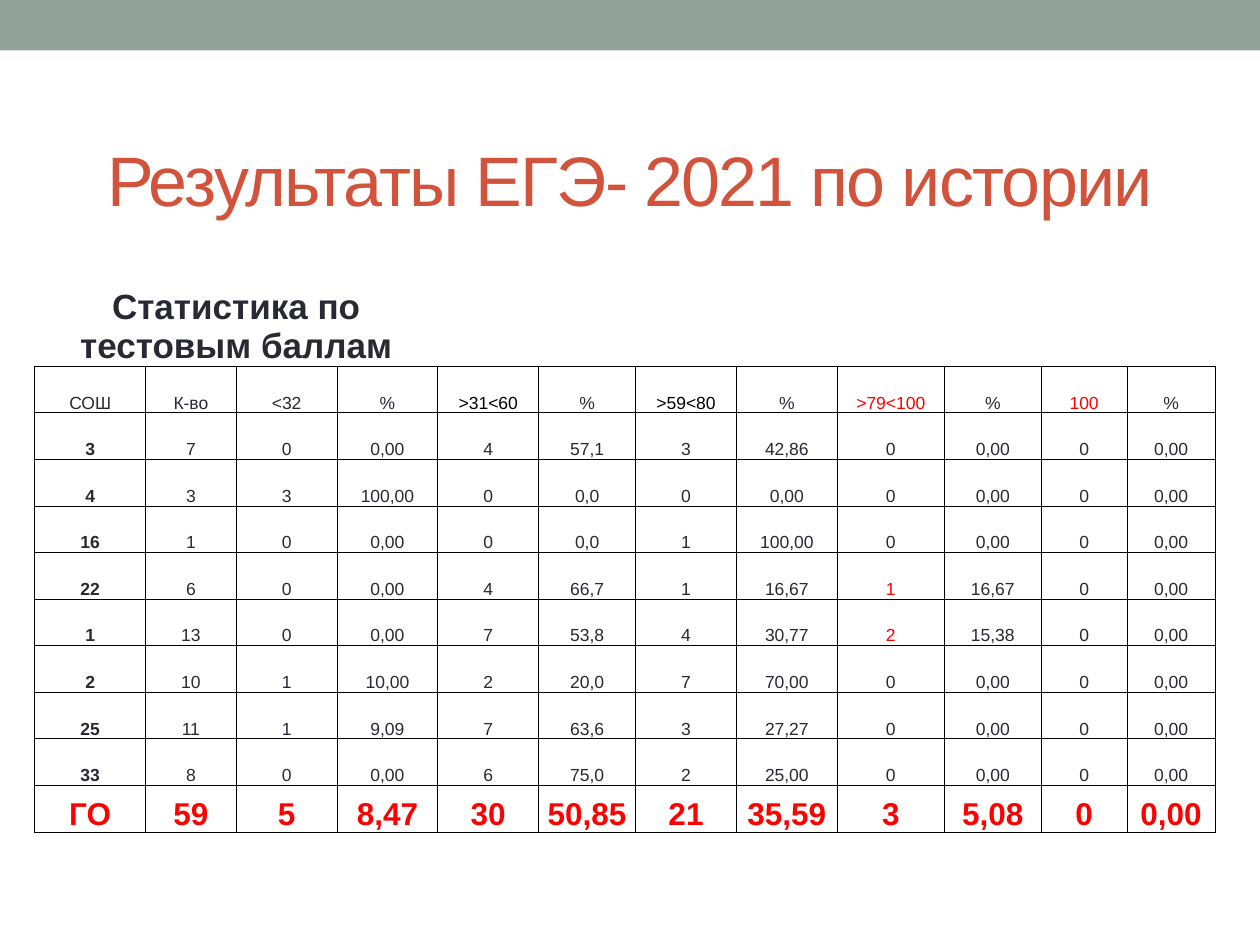
import pptx
import pptx.dml.color
import pptx.enum.shapes
import pptx.enum.text
import pptx.oxml
import pptx.oxml.ns
import pptx.util
import lxml.etree

WIDE = pptx.util.Inches(10)
HIGH = pptx.util.Inches(7.5)
FONT = "Arial"
INK, RED, BLACK = "292934", "FF0000", "000000"
PLAIN = "{2D5ABB26-0587-4C30-8999-92F81FD0307C}"
COLS = [8.8, 7.2, 8, 8, 8, 7.7, 8, 8, 8.5, 7.7, 6.8, 7]
ROWS = [4.93, 5.87] + [4.93] * 11
HEADS = ["СОШ", "К-во", "<32", "%", ">31<60", "%", ">59<80", "%",
         ">79<100", "%", "100", "%"]
TINTS = {4: BLACK, 6: BLACK, 8: RED, 10: RED}
DATA = [line.split() for line in """
3 7 0 0,00 4 57,1 3 42,86 0 0,00 0 0,00
4 3 3 100,00 0 0,0 0 0,00 0 0,00 0 0,00
16 1 0 0,00 0 0,0 1 100,00 0 0,00 0 0,00
22 6 0 0,00 4 66,7 1 16,67 1 16,67 0 0,00
1 13 0 0,00 7 53,8 4 30,77 2 15,38 0 0,00
2 10 1 10,00 2 20,0 7 70,00 0 0,00 0 0,00
25 11 1 9,09 7 63,6 3 27,27 0 0,00 0 0,00
33 8 0 0,00 6 75,0 2 25,00 0 0,00 0 0,00
""".strip().splitlines()]
TOTAL = "ГО 59 5 8,47 30 50,85 21 35,59 3 5,08 0 0,00".split()


def across(share):
    return round(WIDE * share / 100)


def down(share):
    return round(HIGH * share / 100)


def place(box):
    left, top, wide, high = box
    return across(left), down(top), across(wide), down(high)


def color(code):
    return pptx.dml.color.RGBColor.from_string(code)


def write(frame, text, size, tint, bold=False):
    para = frame.paragraphs[0]
    para.alignment = pptx.enum.text.PP_ALIGN.CENTER
    run = para.add_run()
    run.text = text
    run.font.name = FONT
    run.font.size = pptx.util.Pt(size)
    run.font.bold = bold
    run.font.color.rgb = color(tint)
    return run


def band(slide, box):
    shape = slide.shapes.add_shape(
        pptx.enum.shapes.MSO_SHAPE.RECTANGLE, *place(box))
    shape.shadow.inherit = False
    shape.fill.solid()
    shape.fill.fore_color.rgb = color("93A299")
    shape.line.fill.background()


def title(slide, box):
    frame = slide.shapes.add_textbox(*place(box)).text_frame
    frame.word_wrap = True
    frame.vertical_anchor = pptx.enum.text.MSO_ANCHOR.MIDDLE
    run = write(frame, "Результаты ЕГЭ- 2021 по истории", 40, "D2533C")
    run.font._element.set("spc", "-100")


def edge(cell, sides):
    props = cell._tc.get_or_add_tcPr()
    for side in sides:
        line = lxml.etree.SubElement(
            props, pptx.oxml.ns.qn("a:ln" + side), w=str(pptx.util.Pt(0.5)))
        fill = lxml.etree.SubElement(line, pptx.oxml.ns.qn("a:solidFill"))
        lxml.etree.SubElement(
            fill, pptx.oxml.ns.qn("a:srgbClr"), val=BLACK)


def style(row, col, text):
    if row == 2:
        return 10, TINTS.get(col, INK), False
    if row == 11:
        return 18, RED, True
    hot = col == 8 and text != "0"
    return 10, RED if hot else INK, col == 0


def scores(slide, box):
    frame = slide.shapes.add_table(len(ROWS), len(COLS), *place(box))
    table = frame.table
    table.first_row = table.horz_banding = False
    table._tbl.tblPr.find(pptx.oxml.ns.qn("a:tableStyleId")).text = PLAIN
    for col, share in zip(table.columns, COLS):
        col.width = across(share)
    for row, share in zip(table.rows, ROWS):
        row.height = down(share)
    frame.height = down(box[3])
    lines = dict(enumerate([HEADS, *DATA, TOTAL], 2))
    sides = {0: "", 1: "B", 12: "T"}
    for row in range(len(ROWS)):
        for col in range(len(COLS)):
            cell = table.cell(row, col)
            cell.margin_left = cell.margin_right = across(0.1)
            cell.margin_top = across(0.1)
            cell.margin_bottom = 0
            cell.vertical_anchor = pptx.enum.text.MSO_ANCHOR.BOTTOM
            edge(cell, sides.get(row, "LRTB"))
            cell.fill.background()
            if row in lines:
                text = lines[row][col]
                write(cell.text_frame, text, *style(row, col, text))
    head = table.cell(1, 0)
    head.merge(table.cell(1, 3))
    write(head.text_frame, "Статистика по тестовым баллам", 20, INK, True)


def main():
    deck = pptx.Presentation()
    deck.slide_width, deck.slide_height = WIDE, HIGH
    slide = deck.slides.add_slide(deck.slide_layouts[6])
    band(slide, (0, 0, 100, 5.33))
    title(slide, (5, 7.73, 90, 22.27))
    scores(slide, (2.75, 24.8, 93.7, 68.27))
    deck.save("out.pptx")


if __name__ == "__main__":
    main()
